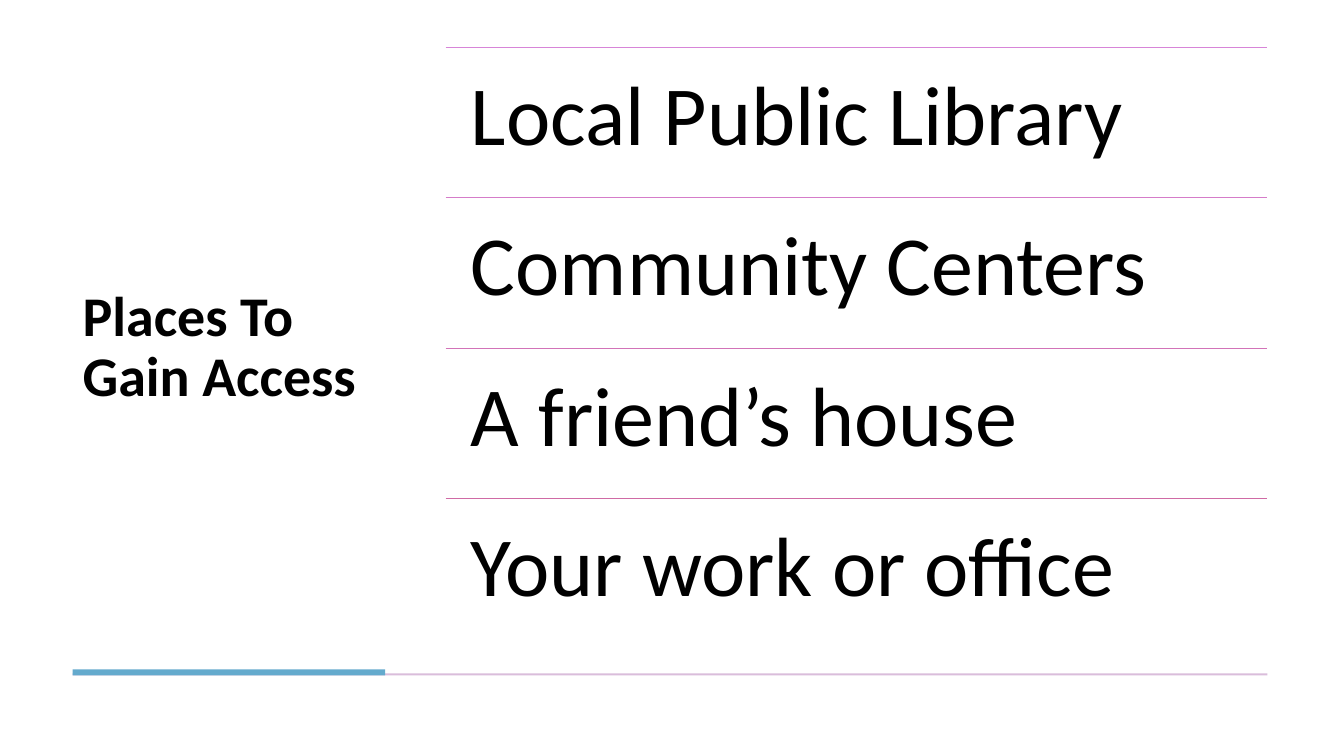
from pptx import Presentation
from pptx.dml.color import RGBColor
from pptx.enum.shapes import MSO_CONNECTOR, MSO_SHAPE
from pptx.enum.text import MSO_ANCHOR, MSO_AUTO_SIZE, PP_ALIGN
from pptx.oxml.ns import qn
from pptx.util import Inches, Pt

TITLE = "Places To Gain Access"
PLACES = [
    ("Local Public Library", "orchid"),
    ("Community Centers", "mauve"),
    ("A friend’s house", "rose"),
    ("Your work or office", "pink"),
]
COLORS = {
    "text": "000000", "page": "FFFFFF", "rule": "DABDDB", "accent": "64AACD",
    "orchid": "D785D8", "mauve": "D57CC9", "rose": "D273B8", "pink": "CF6AA5",
}
FONT = "Calibri"
WIDTH, HEIGHT = 13.33, 7.5
LEFT, RIGHT, TOP, BASE = 0.72, 12.57, 0.47, 6.44
SIDE = 3.1
LIST = 4.42
ROW = (BASE - TOP) / len(PLACES)
FOOT = 6.68


def color(name):
    return RGBColor.from_string(COLORS[name])


def box(left, top, width, height):
    return [Inches(n) for n in (left, top, width, height)]


def write(shape, text, size, bold, inset, anchor):
    frame = shape.text_frame
    frame.word_wrap = True
    frame.auto_size = MSO_AUTO_SIZE.NONE
    frame.vertical_anchor = anchor
    frame.margin_left = frame.margin_right = Inches(inset)
    frame.margin_top = frame.margin_bottom = Inches(inset)
    para = frame.paragraphs[0]
    para.text = text
    para.alignment = PP_ALIGN.LEFT
    para.line_spacing = 0.9
    font = para.font
    font.name, font.size, font.bold = FONT, Pt(size), bold
    font.color.rgb = color("text")


def bar(slide, name, *place):
    shape = slide.shapes.add_shape(MSO_SHAPE.RECTANGLE, *box(*place))
    shape.shadow.inherit = False
    shape.fill.solid()
    shape.fill.fore_color.rgb = color(name)
    shape.line.fill.background()


def rule(slide, name, top):
    line = slide.shapes.add_connector(
        MSO_CONNECTOR.STRAIGHT, *box(LIST, top, RIGHT, top))
    line.line.color.rgb = color(name)
    line.line.width = Pt(1)
    props = line._element.spPr
    props.append(props.makeelement(qn("a:effectLst"), {}))


def main():
    deck = Presentation()
    deck.slide_width, deck.slide_height = Inches(WIDTH), Inches(HEIGHT)
    slide = deck.slides.add_slide(deck.slide_layouts[5])
    slide.background.fill.solid()
    slide.background.fill.fore_color.rgb = color("page")

    title = slide.shapes.title
    title.left, title.top, title.width, title.height = box(
        LEFT, TOP, SIDE, BASE - TOP)
    write(title, TITLE, 40, True, 0.1, MSO_ANCHOR.MIDDLE)

    bar(slide, "rule", LEFT, FOOT, RIGHT - LEFT, 0.02)
    bar(slide, "accent", LEFT, FOOT - 0.04, SIDE, 0.06)

    for i, (place, name) in enumerate(PLACES):
        top = TOP + i * ROW
        rule(slide, name, top)
        label = slide.shapes.add_textbox(*box(LIST, top, RIGHT - LIST, ROW))
        write(label, place, 60, False, 0.25, MSO_ANCHOR.TOP)

    deck.save("out.pptx")


if __name__ == "__main__":
    main()
